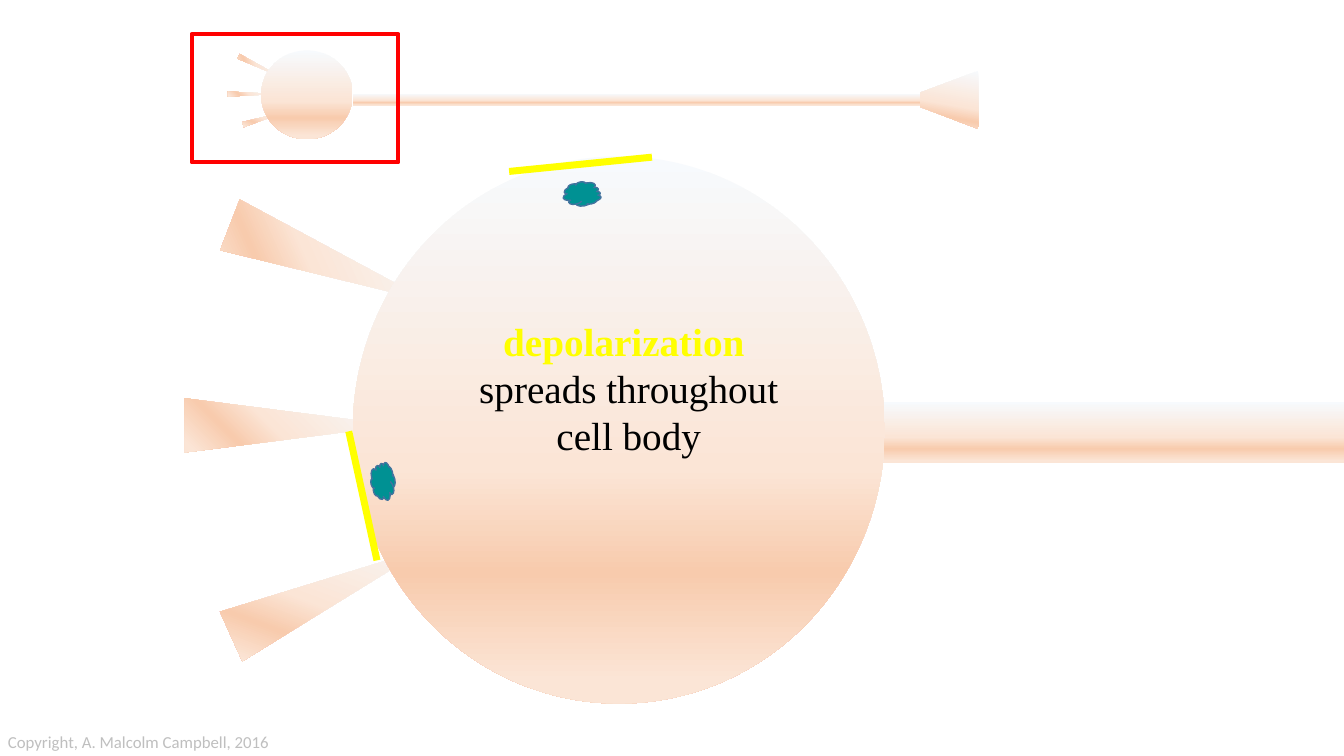
from lxml import etree
from pptx import Presentation
from pptx.dml.color import RGBColor
from pptx.enum.shapes import MSO_CONNECTOR, MSO_SHAPE
from pptx.enum.text import MSO_AUTO_SIZE, PP_ALIGN
from pptx.oxml.ns import qn
from pptx.util import Cm, Pt

RECT = MSO_SHAPE.RECTANGLE
OVAL = MSO_SHAPE.OVAL
SPIKE = MSO_SHAPE.ISOSCELES_TRIANGLE
TRAP = MSO_SHAPE.TRAPEZOID
CLOUD = MSO_SHAPE.CLOUD
LINE = MSO_CONNECTOR.STRAIGHT
GROW = MSO_AUTO_SIZE.SHAPE_TO_FIT_TEXT
MID = PP_ALIGN.CENTER
LEFT = PP_ALIGN.LEFT

THEME = {
    "skin": [(0, "F7FAFD"), (57, "FBE5D6"), (76, "F8CBAD"), (96, "FBE5D6")],
    "frame": ("FF0000", 3),
    "patch": ("FFFF00", 5),
    "teal": "009193",
    "rim": ("43739E", 1),
    "key": {"name": "Times New Roman", "size": Pt(28), "bold": True, "color": "FFFF00"},
    "main": {"name": "Times New Roman", "size": Pt(28), "bold": False, "color": "000000"},
    "foot": {"name": "Calibri", "size": Pt(12), "bold": False, "color": "BFBFBF"},
}

SLIDE = (33.87, 19.05)
BIG_SPIKE = (1.37, 5.38)
SMALL_SPIKE = (0.13, 1.24)
DOT = (0.61, 0.94)

BIG_ARMS = [(7.62, 3.94, 111), (6.65, 8.03, 90), (7.59, 12.24, 65.6)]
SMALL_ARMS = [(6.5, 1.07, 116), (6.3, 1.75, 90), (6.65, 2.34, 73)]
BIG_AXON = (21.41, 10.13, 14.33, 1.55)
SMALL_AXON = (8.89, 2.36, 14.33, 0.3)
BIG_BODY = (8.89, 3.94, 13.41, 13.79)
SMALL_BODY = (6.58, 1.27, 2.31, 2.24)
END = (23.19, 1.78, 1.47, 1.47)
FRAME = (4.83, 0.86, 5.21, 3.23)
DOTS = [(9.35, 11.68, 345.8), (14.35, 4.42, 78.8)]
PATCHES = [(12.83, 4.32, 16.43, 3.96), (8.79, 10.87, 9.5, 14.12)]

TEXTS = [
    ((9.42, 7.87, 12.85, 3.84), True, MID, [
        ("depolarization ", "key"),
        ("spreads throughout", "main"),
        ("cell body", "main"),
    ]),
    ((-0.05, 18.31, 7.16, 0.76), False, LEFT, [
        ("Copyright, A. Malcolm Campbell, 2016", "foot"),
    ]),
]


def apply(target, values):
    for name, value in values.items():
        setattr(target, name, value)


def stroke(item, style):
    color, width = style
    item.line.color.rgb = RGBColor.from_string(color)
    item.line.width = Pt(width)


def shape(kind, box, turn=0):
    item = slide.shapes.add_shape(kind, *map(Cm, box))
    item.rotation = turn
    item.shadow.inherit = False
    item.fill.background()
    item.line.fill.background()
    return item


def cell(kind, box, angle=90, turn=0):
    item = shape(kind, box, turn)
    grad = etree.Element(qn("a:gradFill"), rotWithShape="1")
    stops = etree.SubElement(grad, qn("a:gsLst"))
    for place, color in THEME["skin"]:
        stop = etree.SubElement(stops, qn("a:gs"), pos=str(place * 1000))
        etree.SubElement(stop, qn("a:srgbClr"), val=color)
    etree.SubElement(grad, qn("a:lin"), ang=str(angle * 60000), scaled="0")
    props = item._element.spPr
    props.replace(props.find(qn("a:noFill")), grad)
    return item


def dot(left, top, turn):
    item = shape(CLOUD, (left, top, *DOT), turn)
    item.fill.solid()
    item.fill.fore_color.rgb = RGBColor.from_string(THEME["teal"])
    stroke(item, THEME["rim"])


def patch(ends):
    item = slide.shapes.add_connector(LINE, *map(Cm, ends))
    stroke(item, THEME["patch"])
    etree.SubElement(item._element.spPr, qn("a:effectLst"))


def label(box, wrap, align, lines):
    frame = slide.shapes.add_textbox(*map(Cm, box)).text_frame
    apply(frame, {"word_wrap": wrap, "auto_size": GROW})
    for row, (words, style) in enumerate(lines):
        para = frame.add_paragraph() if row else frame.paragraphs[0]
        para.alignment = align
        run = para.add_run()
        run.text = words
        values = dict(THEME[style])
        run.font.color.rgb = RGBColor.from_string(values.pop("color"))
        apply(run.font, values)


deck = Presentation()
apply(deck, {"slide_width": Cm(SLIDE[0]), "slide_height": Cm(SLIDE[1])})
slide = deck.slides.add_slide(deck.slide_layouts[6])

cell(RECT, BIG_AXON)
for arms, size in ((BIG_ARMS, BIG_SPIKE), (SMALL_ARMS, SMALL_SPIKE)):
    for left, top, turn in arms:
        cell(SPIKE, (left, top, *size), 45, turn)
cell(OVAL, SMALL_BODY)
cell(RECT, SMALL_AXON)
cell(TRAP, END, 190, 270).adjustments[0] = 0.377
stroke(shape(RECT, FRAME), THEME["frame"])
cell(OVAL, BIG_BODY)
for ends in PATCHES:
    patch(ends)
for spot in DOTS:
    dot(*spot)
for text in TEXTS:
    label(*text)

deck.save("out.pptx")
